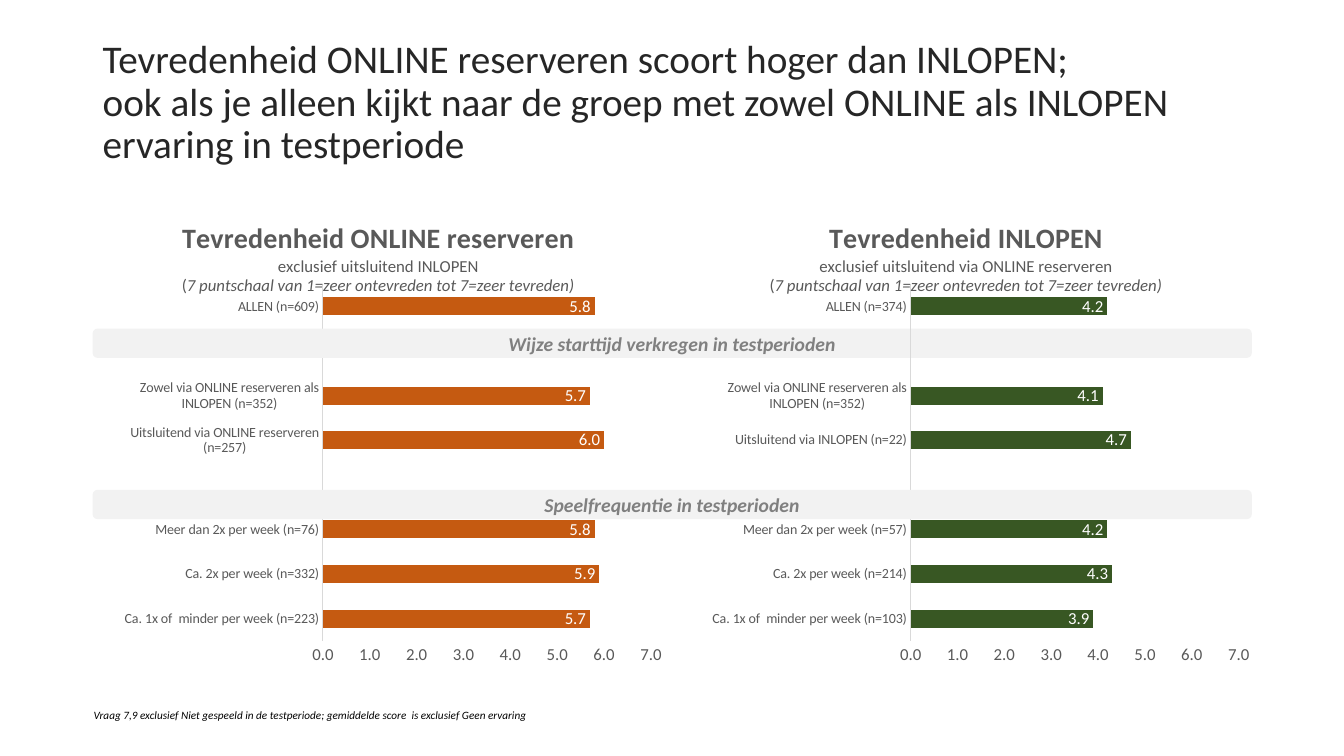
from lxml import etree
from pptx import Presentation
from pptx.chart.data import CategoryChartData
from pptx.dml.color import RGBColor
from pptx.enum.chart import XL_CHART_TYPE, XL_LABEL_POSITION, XL_TICK_MARK
from pptx.enum.shapes import MSO_SHAPE
from pptx.enum.text import MSO_ANCHOR, MSO_AUTO_SIZE, PP_ALIGN
from pptx.oxml.ns import qn
from pptx.util import Pt

BAR_STACKED = XL_CHART_TYPE.BAR_STACKED
INSIDE_END = XL_LABEL_POSITION.INSIDE_END
NO_TICK = XL_TICK_MARK.NONE
ROUNDED = MSO_SHAPE.ROUNDED_RECTANGLE
MIDDLE = MSO_ANCHOR.MIDDLE
NO_FIT = MSO_AUTO_SIZE.NONE
CENTER, LEFT = PP_ALIGN.CENTER, PP_ALIGN.LEFT

# Content
FONT = "Calibri"
GREY = "595959"
HEADLINE = ("Tevredenheid ONLINE reserveren scoort hoger dan INLOPEN; \v"
            "ook als je alleen kijkt naar de groep met zowel ONLINE als INLOPEN "
            "ervaring in testperiode")
SCALE = "7 puntschaal van 1=zeer ontevreden tot 7=zeer tevreden)"
ONLINE = {
    "title": "Tevredenheid ONLINE reserveren",
    "subtitle": "exclusief uitsluitend INLOPEN",
    "color": "C55A11",
    "scores": [
        ("Ca. 1x of  minder per week (n=223)", 5.7),
        ("Ca. 2x per week (n=332)", 5.9),
        ("Meer dan 2x per week (n=76)", 5.8),
        ("", None),
        ("Uitsluitend via ONLINE reserveren (n=257)", 6.0),
        ("Zowel via ONLINE reserveren als INLOPEN (n=352)", 5.7),
        ("", None),
        ("ALLEN (n=609)", 5.8),
    ],
}
WALK_IN = {
    "title": "Tevredenheid INLOPEN",
    "subtitle": "exclusief uitsluitend via ONLINE reserveren",
    "color": "385723",
    "scores": [
        ("Ca. 1x of  minder per week (n=103)", 3.9),
        ("Ca. 2x per week (n=214)", 4.3),
        ("Meer dan 2x per week (n=57)", 4.2),
        ("", None),
        ("Uitsluitend via INLOPEN (n=22)", 4.7),
        ("Zowel via ONLINE reserveren als INLOPEN (n=352)", 4.1),
        ("", None),
        ("ALLEN (n=374)", 4.2),
    ],
}
FOOTNOTE = ("Vraag 7,9 exclusief Niet gespeeld in de testperiode; "
            "gemiddelde score  is exclusief Geen ervaring")

# Layout in points
MARGIN = 66.2
CHART_TOP, CHART_WIDTH, CHART_HEIGHT = 144, 408.2, 342.7
CHART_STEP = 419.8
BAND_WIDTH, BAND_HEIGHT = CHART_STEP + CHART_WIDTH, 20.9
PLOT = {"x": 0.4, "y": 0.17, "w": 0.57, "h": 0.74}
PLOT = {"x": 0.403, "y": 0.172, "w": 0.574, "h": 0.744}


def rgb(color):
    return RGBColor.from_string(color)


def style(font, size, color, bold=False, italic=False):
    font.name, font.size = FONT, Pt(size)
    font.bold, font.italic = bold, italic
    font.color.rgb = rgb(color)


def set_plot_area(chart):
    plot_area = chart.plots[0]._element.getparent()
    for old in plot_area.findall(qn("c:layout")):
        plot_area.remove(old)
    layout = etree.Element(qn("c:layout"))
    manual = etree.SubElement(layout, qn("c:manualLayout"))
    settings = [("layoutTarget", "inner"), ("xMode", "edge"), ("yMode", "edge"),
                *PLOT.items()]
    for tag, value in settings:
        etree.SubElement(manual, qn(f"c:{tag}")).set("val", str(value))
    plot_area.insert(0, layout)


def add_chart_title(chart, survey):
    frame = chart.chart_title.text_frame
    chart.chart_title.include_in_layout = False
    lines = [[(survey["title"], 20, True, False)],
             [(survey["subtitle"], 12, False, False)],
             [("(", 12, False, False), (SCALE, 12, False, True)]]
    for index, line in enumerate(lines):
        paragraph = frame.add_paragraph() if index else frame.paragraphs[0]
        paragraph.alignment = CENTER
        for text, size, bold, italic in line:
            run = paragraph.add_run()
            run.text = text
            style(run.font, size, GREY, bold, italic)


def add_score_chart(slide, column, survey):
    data = CategoryChartData(number_format="0.0")
    data.categories = [label for label, _ in survey["scores"]]
    data.add_series("Tevredenheid", [score for _, score in survey["scores"]])
    chart = slide.shapes.add_chart(
        BAR_STACKED, Pt(MARGIN + column * CHART_STEP), Pt(CHART_TOP),
        Pt(CHART_WIDTH), Pt(CHART_HEIGHT), data).chart
    style(chart.font, 10, "000000")
    chart.has_legend = False
    add_chart_title(chart, survey)
    set_plot_area(chart)

    # Axes
    labels_axis, score_axis = chart.category_axis, chart.value_axis
    for axis, size in ((labels_axis, 10), (score_axis, 12)):
        axis.major_tick_mark = axis.minor_tick_mark = NO_TICK
        axis.has_major_gridlines = False
        style(axis.tick_labels.font, size, GREY)
    labels_axis.format.line.color.rgb = rgb("D9D9D9")
    labels_axis.format.line.width = Pt(0.75)
    score_axis.format.line.fill.background()
    score_axis.minimum_scale, score_axis.maximum_scale = 0, 7
    score_axis.major_unit = 1
    score_axis.tick_labels.number_format = "0.0"
    score_axis.tick_labels.number_format_is_linked = False

    # Bars and their values
    bars = chart.plots[0]
    bars.gap_width, bars.overlap = 150, 100
    bars.vary_by_categories = False
    fill = bars.series[0].format.fill
    fill.solid()
    fill.fore_color.rgb = rgb(survey["color"])
    values = bars.series[0].data_labels
    values.show_value = True
    values.position = INSIDE_END
    values.number_format = "0.0"
    values.number_format_is_linked = False
    style(values.font, 12, "FFFFFF")


def add_band(slide, top, text):
    band = slide.shapes.add_shape(ROUNDED, Pt(MARGIN), Pt(top),
                                  Pt(BAND_WIDTH), Pt(BAND_HEIGHT))
    band.shadow.inherit = False
    band.fill.solid()
    band.fill.fore_color.rgb = rgb("F2F2F2")
    band.line.fill.background()
    frame = band.text_frame
    frame.text = text
    frame.vertical_anchor = MIDDLE
    frame.paragraphs[0].alignment = CENTER
    style(frame.paragraphs[0].runs[0].font, 14, "808080", True, True)


def add_headline(slide):
    title = slide.shapes.title
    title.left, title.top, title.width, title.height = (
        Pt(MARGIN), Pt(28.8), Pt(798.5), Pt(90))
    frame = title.text_frame
    frame.text = HEADLINE
    frame.auto_size = NO_FIT
    frame.word_wrap = True
    frame.vertical_anchor = MIDDLE
    paragraph = frame.paragraphs[0]
    paragraph.alignment = LEFT
    paragraph.line_spacing = 0.9
    for run in paragraph.runs:
        style(run.font, 28, "262626")


def add_footnote(slide):
    note = slide.shapes.add_textbox(Pt(59.8), Pt(502.6), Pt(328.3), Pt(17.3))
    note.text_frame.text = FOOTNOTE
    note.text_frame.word_wrap = False
    style(note.text_frame.paragraphs[0].runs[0].font, 8, "000000", italic=True)


def main():
    deck = Presentation()
    deck.slide_width, deck.slide_height = Pt(960), Pt(540)
    slide = deck.slides.add_slide(deck.slide_layouts[5])
    add_headline(slide)
    # The first band lies between the two charts, the second above both
    add_score_chart(slide, 0, ONLINE)
    add_band(slide, 234.7, "Wijze starttijd verkregen in testperioden")
    add_score_chart(slide, 1, WALK_IN)
    add_footnote(slide)
    add_band(slide, 349.9, "Speelfrequentie in testperioden")
    deck.save("out.pptx")


if __name__ == "__main__":
    main()
